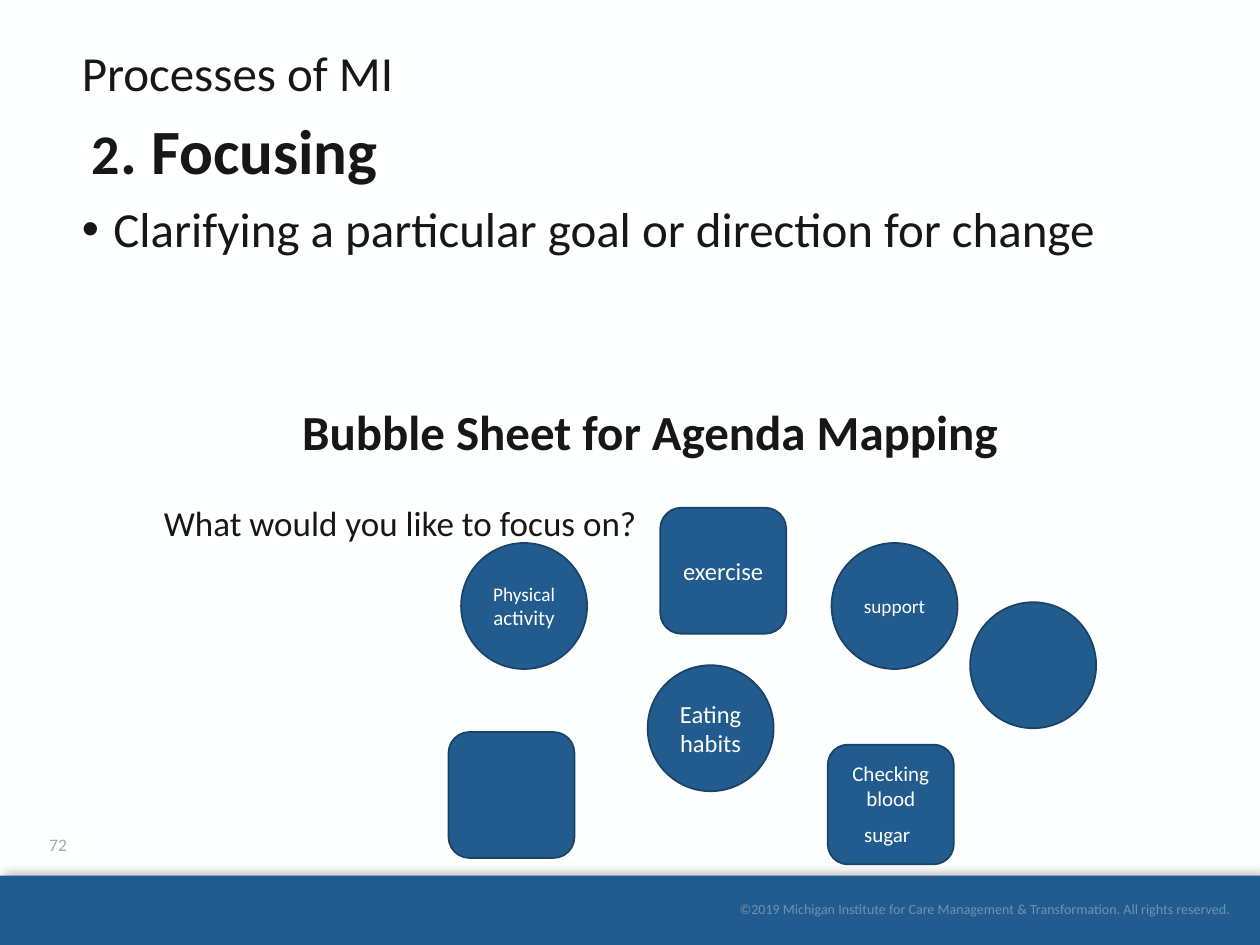
from lxml import etree
from pptx import Presentation
from pptx.dml.color import RGBColor
from pptx.enum.shapes import MSO_SHAPE
from pptx.enum.text import MSO_ANCHOR, MSO_AUTO_SIZE, PP_ALIGN
from pptx.oxml import parse_xml
from pptx.oxml.ns import nsdecls, qn
from pptx.util import Inches, Pt

CIRCLE, ROUNDED, BAR = MSO_SHAPE.OVAL, MSO_SHAPE.ROUNDED_RECTANGLE, MSO_SHAPE.RECTANGLE
MIDDLE, TOP = MSO_ANCHOR.MIDDLE, MSO_ANCHOR.TOP
LEFT, CENTER, RIGHT = PP_ALIGN.LEFT, PP_ALIGN.CENTER, PP_ALIGN.RIGHT
NO_FIT = MSO_AUTO_SIZE.NONE
FONT = "Calibri"
COLORS = {"paper": "FEFFFF", "blue": "225B8D", "outline": "194368",
          "ink": "171816", "number": "A8A8A8"}
SPACING = {"line_spacing": 0.9, "space_before": Pt(10)}


def rgb(name):
    return RGBColor.from_string(COLORS[name])


def inches(box):
    return [Inches(length) for length in box]


def apply_format(target, values):
    for name, value in values.items():
        setattr(target, name, value)


def add_run(paragraph, text, size, color, bold=False):
    run = paragraph.add_run()
    run.text = text
    apply_format(run.font, {"name": FONT, "size": Pt(size), "bold": bold})
    run.font.color.rgb = rgb(color)
    return run


def paint(shape, outline=None):
    shape.shadow.inherit = False
    shape.fill.solid()
    shape.fill.fore_color.rgb = rgb("blue")
    if outline:
        shape.line.color.rgb = rgb(outline)
        shape.line.width = Pt(1)
    else:
        shape.line.fill.background()


def add_label(slide, box, text, size, color, align=LEFT, anchor=TOP, bold=False, **margins):
    label = slide.shapes.add_textbox(*inches(box))
    frame = label.text_frame
    apply_format(frame, {"word_wrap": True, "vertical_anchor": anchor, **margins})
    frame.paragraphs[0].alignment = align
    return add_run(frame.paragraphs[0], text, size, color, bold)


def add_footer(slide, box):
    left, top, width, height = box
    bar = slide.shapes.add_shape(BAR, *inches(box))
    paint(bar)
    effects = bar._element.spPr.find(qn("a:effectLst"))
    effects.append(parse_xml(
        f'<a:outerShdw {nsdecls("a")} blurRad="{Pt(6)}" dist="{Pt(3)}" dir="18900000">'
        '<a:srgbClr val="000000"><a:alpha val="25000"/></a:srgbClr></a:outerShdw>'))
    copyright_run = add_label(
        slide, (left + 4.95, top + 0.13, 4.82, 0.27),
        "©2019 Michigan Institute for Care Management & Transformation. All rights reserved.",
        8, "paper", RIGHT, MIDDLE, margin_right=0)
    ink = copyright_run._r.rPr.find(".//" + qn("a:srgbClr"))
    etree.SubElement(ink, qn("a:alpha"), val="35000")
    add_label(slide, (left + 0.25, top - 0.45, 0.42, 0.4), "72", 10, "number",
              CENTER, MIDDLE, margin_left=0, margin_right=0)


def add_process_text(slide, box):
    body = slide.placeholders[1]
    apply_format(body, dict(zip(("left", "top", "width", "height"), inches(box))))
    frame = body.text_frame
    apply_format(frame, {"auto_size": NO_FIT, "vertical_anchor": TOP})
    lines = [
        ([("Processes of MI", 28, False)], 0, 0, None),
        ([("2", 32, True), (". Focusing", 36, True)], 0.08, 0, None),
        ([("Clarifying a particular goal or direction for change", 28, False)], 0.25, -0.25, "•"),
    ]
    for index, (runs, margin, indent, bullet) in enumerate(lines):
        paragraph = frame.add_paragraph() if index else frame.paragraphs[0]
        properties = paragraph._p.get_or_add_pPr()
        properties.set("marL", str(Inches(margin)))
        properties.set("indent", str(Inches(indent)))
        if bullet:
            etree.SubElement(properties, qn("a:buFont"), typeface="Arial")
            etree.SubElement(properties, qn("a:buChar"), char=bullet)
        else:
            etree.SubElement(properties, qn("a:buNone"))
        apply_format(paragraph, {**SPACING, "alignment": LEFT})
        if index == 0:
            paragraph.space_before = Pt(0)
        for text, size, bold in runs:
            add_run(paragraph, text, size, "ink", bold)


def add_bubble(slide, outline, box, lines):
    bubble = slide.shapes.add_shape(outline, *inches(box))
    paint(bubble, "outline")
    frame = bubble.text_frame
    apply_format(frame, {"word_wrap": True, "vertical_anchor": MIDDLE})
    for index, runs in enumerate(lines):
        paragraph = frame.add_paragraph() if index else frame.paragraphs[0]
        paragraph.alignment = CENTER
        for text, size in runs:
            add_run(paragraph, text, size, "paper")


def add_agenda_map(slide, box):
    left, top, _, _ = box
    bubbles = [
        (CIRCLE, 2.77, 1.17, 1, [[("Physical", 11)], [("activity", 12)]]),
        (CIRCLE, 6.81, 1.64, 1, []),
        (CIRCLE, 4.25, 2.14, 1, [[("Eating habits", 14)]]),
        (CIRCLE, 5.71, 1.17, 1, [[("support", 11)]]),
        (ROUNDED, 4.35, 0.89, 1, [[("exercise", 14)]]),
        (ROUNDED, 2.67, 2.67, 1, []),
        (ROUNDED, 5.68, 2.77, 0.95, [[("Checking blood sugar", 12), (" ", 18)]]),
    ]
    for outline, x, y, height, lines in bubbles:
        add_bubble(slide, outline, (left + x, top + y, 1, height), lines)
    add_label(slide, (left, top + 0.79, 4.77, 0.44), "What would you like to focus on?",
              20, "ink", margin_left=Inches(0.41))
    add_label(slide, (left + 1.41, top, 5.89, 0.57), "Bubble Sheet for Agenda Mapping",
              28, "ink", bold=True)


def main():
    presentation = Presentation()
    apply_format(presentation, {"slide_width": Inches(10), "slide_height": Inches(7.5)})
    slide = presentation.slides.add_slide(presentation.slide_layouts[1])
    slide.background.fill.solid()
    slide.background.fill.fore_color.rgb = rgb("paper")
    title = slide.shapes.title._element
    title.getparent().remove(title)
    add_footer(slide, (0, 6.95, 10, 0.55))
    add_process_text(slide, (0.55, 0.34, 8.62, 5.47))
    add_agenda_map(slide, (0.89, 3.14, 7.81, 3.72))
    presentation.save("out.pptx")


if __name__ == "__main__":
    main()
